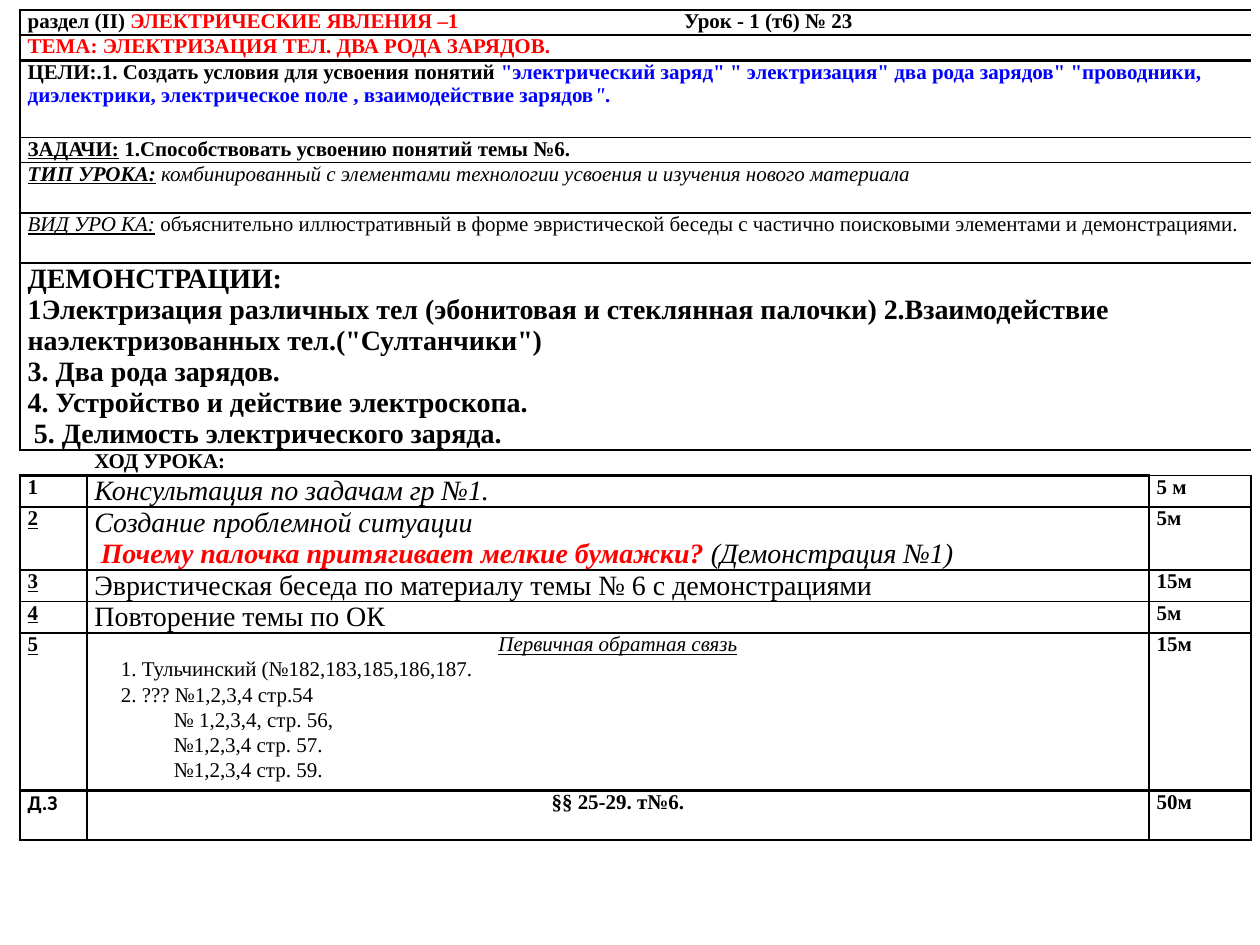
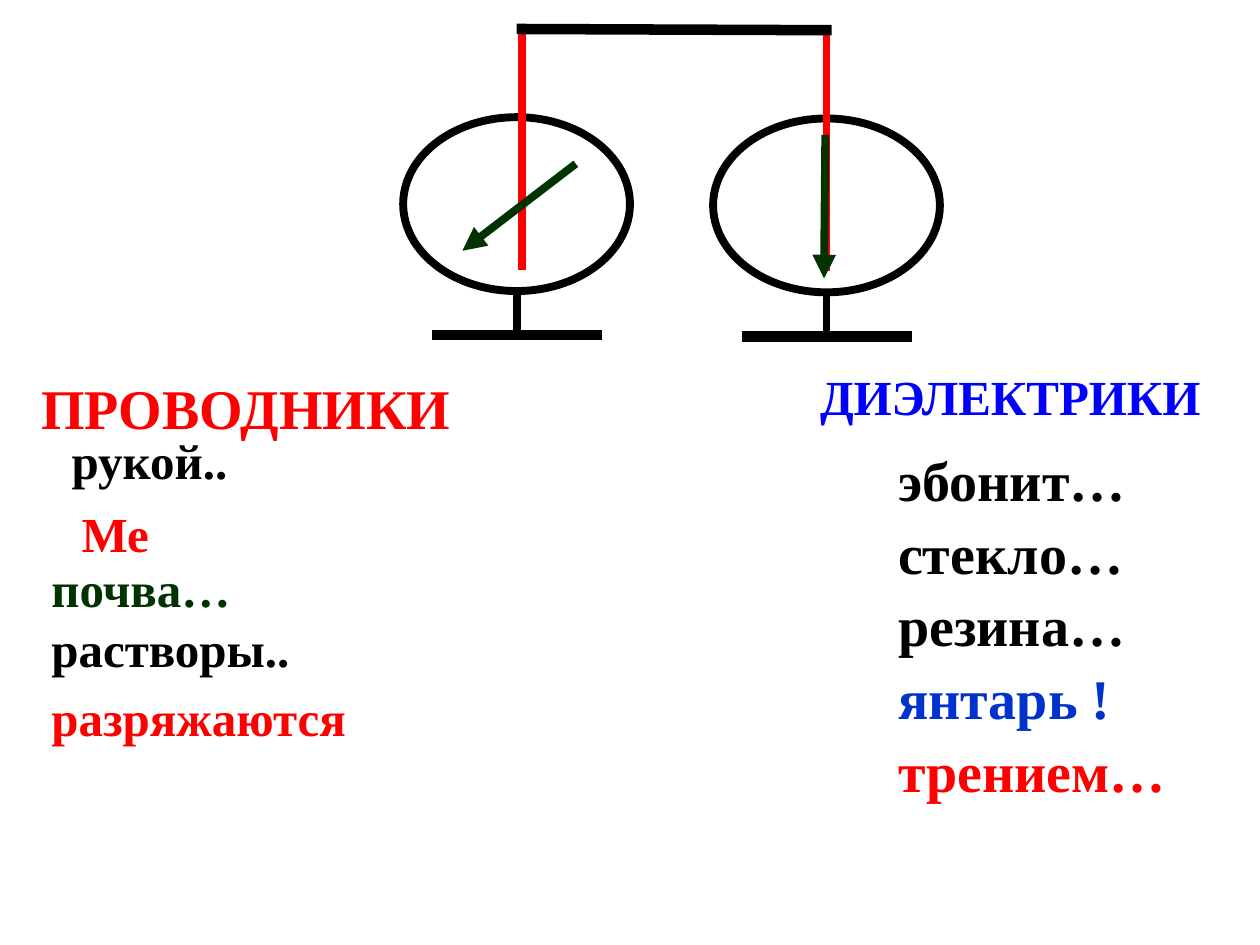
from lxml import etree
from pptx import Presentation
from pptx import util as u
from pptx.dml.color import RGBColor
from pptx.enum import shapes, text
from pptx.oxml.ns import qn

FONT = "Times New Roman"
COLORS = {"black": "000000", "red": "FF0000", "blue": "0000FF",
          "royal": "0033CC", "green": "003300"}
LINE_SPACING = 1.08

# A run is (text, style words); a paragraph is a list of runs.
# Lesson header rows: (height, text size, paragraphs)
HEADER_ROWS = [
    (0.2, 12, [[("раздел (II) ", "b"), ("ЭЛЕКТРИЧЕСКИЕ ЯВЛЕНИЯ –1", "b red"),
                ("\tУрок - 1 (т6) № 23", "b")]]),
    (0.2, 12, [[("ТЕМА: ЭЛЕКТРИЗАЦИЯ ТЕЛ. ДВА РОДА ЗАРЯДОВ.", "b red")]]),
    (0.61, 12, [[("ЦЕЛИ:.1. Создать условия для усвоения понятий ", "b"),
                 ('"электрический заряд" " электризация" два рода зарядов" "проводники, '
                  "диэлектрики, электрическое поле , взаимодействие зарядов", "b blue"),
                 ('".', "b i blue")]]),
    (0.2, 12, [[("ЗАДАЧИ:", "b u"), (" 1.Способствовать усвоению понятий темы №6.", "b")]]),
    (0.4, 12, [[("ТИП УРОКА:", "b i u"),
                (" комбинированный с элементами технологии усвоения и изучения "
                 "нового материала", "i")]]),
    (0.4, 12, [[("ВИД УРО КА:", "i u"),
                (" объяснительно иллюстративный в форме эвристической беседы с частично "
                 "поисковыми элементами и демонстрациями.", "")]]),
    (1.48, 16, [[("ДЕМОНСТРАЦИИ:", "b")],
                [("1Электризация различных тел (эбонитовая и стеклянная палочки) "
                  '2.Взаимодействие наэлектризованных тел.("Султанчики")', "b")],
                [("3. Два рода зарядов.", "b")],
                [("4. Устройство и действие электроскопа.", "b")],
                [("5. Делимость электрического заряда.", "b")]]),
]
# Lesson plan rows: (height, number, number style, text size, paragraphs, time)
PLAN_ROWS = [
    (0.2, "", "b", 12, [[("ХОД УРОКА:", "b")]], ""),
    (0.25, "1", "b", 16, [[("Консультация по задачам гр №1.", "i")]], "5 м"),
    (0.5, "2", "b u", 16, [[("Создание проблемной ситуации", "i")],
                           [("Почему палочка притягивает мелкие бумажки?", "b i red"),
                            (" (Демонстрация №1)", "i")]], "5м"),
    (0.25, "3", "b u", 16,
     [[("Эвристическая беседа по материалу темы № 6 с демонстрациями", "")]], "15м"),
    (0.25, "4", "b u", 16, [[("Повторение темы по ОК", "")]], "5м"),
    (1.25, "5", "b u", 12, [[("Первичная обратная связь", "i u")],
                            [("1. Тульчинский (№182,183,185,186,187.", "")],
                            [("2. ??? №1,2,3,4 стр.54", "")],
                            [("№ 1,2,3,4, стр. 56,", "")],
                            [("№1,2,3,4 стр. 57.", "")],
                            [("№1,2,3,4 стр. 59.", "")]], "15м"),
    (0.39, "Д.З", "b calibri", 12, [[("§§ 25-29. т№6.", "b")]], "50м"),
]
COLUMNS = [0.53, 8.43, 0.81]
ROW_EDGES = [1, 1.5, 1.5, 1, 1, 1, 1.5, 1.5, 1.5, 1, 1, 1, 1, 1.5, 1.5]
OPEN_ROW = len(HEADER_ROWS)
LAST_ROW = OPEN_ROW + len(PLAN_ROWS) - 1
FEEDBACK_ROW = LAST_ROW - 1
# Left indents by (row, paragraph)
INDENTS = {(6, 4): 0.05, (OPEN_ROW + 2, 1): 0.05,
           **{(FEEDBACK_ROW, i): 0.21 if i < 3 else 0.63 for i in range(1, 6)}}
CENTERED = {(FEEDBACK_ROW, 0), (LAST_ROW, 0)}
LESSON_TAB = 5.21

# Electroscopes: (left, top, rod offset, needle from, needle to)
ELECTROSCOPES = [
    (3.2, 0.93, 0.94, (4.57, 1.3), (3.67, 1.99)),
    (5.66, 0.94, 0.9, (6.55, 1.07), (6.54, 2.21)),
]
# Labels: (left, top, width, height, size, wrapped, [(text, colour)])
LABELS = [
    (0.23, 2.87, 3.48, 0.64, 32, False, [("ПРОВОДНИКИ", "red")]),
    (0.47, 3.33, 1.55, 0.57, 28, False, [("рукой..", "black")]),
    (0.55, 3.91, 0.84, 0.57, 28, False, [("Ме", "red")]),
    (0.31, 4.35, 1.64, 0.57, 28, False, [("почва…", "green")]),
    (0.31, 4.82, 2.21, 0.57, 28, False, [("растворы..", "black")]),
    (0.31, 5.37, 2.56, 0.57, 28, False, [("разряжаются", "red")]),
    (6.41, 2.84, 3.28, 0.57, 28, True, [("ДИЭЛЕКТРИКИ", "blue")]),
    (7.03, 3.54, 2.58, 2.79, 32, True,
     [("эбонит…", "black"), ("стекло…", "black"), ("резина…", "black"),
      ("янтарь !", "royal"), ("трением…", "red")]),
]


def rgb(name):
    return RGBColor.from_string(COLORS[name])


def add_run(p, content, size, style):
    """Style words: b, i, u, calibri or a colour name."""
    words = style.split()
    r = p.add_run()
    r.text = content
    f = r.font
    f.size = u.Pt(size)
    f.name = "Calibri" if "calibri" in words else FONT
    f.bold, f.italic, f.underline = (w in words for w in "biu")
    f.color.rgb = rgb(next((w for w in words if w in COLORS), "black"))


def set_borders(cell, widths):
    """Widths in points for left, right, top and bottom; 0 means none."""
    tc_pr = cell._tc.get_or_add_tcPr()
    for side, width in zip("LRTB", widths):
        ln = etree.SubElement(tc_pr, qn(f"a:ln{side}"), w=str(u.Pt(width)))
        if width:
            fill = etree.SubElement(ln, qn("a:solidFill"))
            etree.SubElement(fill, qn("a:srgbClr"), val=COLORS["black"])
        else:
            etree.SubElement(ln, qn("a:noFill"))


def column_edges(row):
    """Widths of the four vertical rules that cross a row."""
    if row < OPEN_ROW:
        side = 1.5 if row in (1, 6) else 1
        return [side, 0, 0, side]
    if row == OPEN_ROW:
        return [0, 0, 0, 0]
    return [1.5, 1, 1, 1.5] if row == LAST_ROW else [1.5, 1.5, 1, 1]


def fill_cell(cell, paragraphs, size, row, main=False):
    tf = cell.text_frame
    for i, runs in enumerate(paragraphs):
        p = tf.add_paragraph() if i else tf.paragraphs[0]
        for content, style in runs:
            add_run(p, content, size, style)
        if not main:
            continue
        if (row, i) in CENTERED:
            p.alignment = text.PP_ALIGN.CENTER
        if (row, i) in INDENTS:
            p._p.get_or_add_pPr().set("marL", str(u.Inches(INDENTS[row, i])))
        if row == FEEDBACK_ROW and i:
            p.line_spacing = LINE_SPACING
        if "\t" in p.text:
            tabs = etree.SubElement(p._p.get_or_add_pPr(), qn("a:tabLst"))
            etree.SubElement(tabs, qn("a:tab"), pos=str(u.Inches(LESSON_TAB)), algn="l")


def build_lesson_plan(slide):
    heights = [row[0] for row in HEADER_ROWS + PLAN_ROWS]
    frame = slide.shapes.add_table(len(heights), len(COLUMNS), u.Inches(0.16), u.Inches(0.08),
                                   u.Inches(sum(COLUMNS)), u.Inches(sum(heights)))
    table = frame.table
    table.first_row = table.horz_banding = False
    for column, width in zip(table.columns, COLUMNS):
        column.width = u.Inches(width)
    for n, height in enumerate(heights):
        table.rows[n].height = u.Inches(height)
        edges = column_edges(n)
        for c in range(len(COLUMNS)):
            cell = table.cell(n, c)
            bottom = 1 if (n, c) == (OPEN_ROW, 2) else ROW_EDGES[n + 1]
            top = 1 if (n, c) == (OPEN_ROW + 1, 2) else ROW_EDGES[n]
            set_borders(cell, (edges[c], edges[c + 1], top, bottom))
            cell.fill.background()
            cell.margin_left = cell.margin_right = u.Inches(0.06)
            cell.margin_top = cell.margin_bottom = 0
            cell.text_frame.paragraphs[0]._p.get_or_add_endParaRPr().set("sz", "1200")
    for n, (_, size, paragraphs) in enumerate(HEADER_ROWS):
        table.cell(n, 0).merge(table.cell(n, 2))
        fill_cell(table.cell(n, 0), paragraphs, size, n, main=True)
    for n, (_, number, style, size, paragraphs, time) in enumerate(PLAN_ROWS, OPEN_ROW):
        fill_cell(table.cell(n, 1), paragraphs, size, n, main=True)
        if number:
            fill_cell(table.cell(n, 0), [[(number, style)]], 12, n)
            fill_cell(table.cell(n, 2), [[(time, "b")]], 12, n)


def add_line(parent, start, end, color="black", width=4.5, arrow=False):
    points = [u.Inches(v) for v in (*start, *end)]
    line = parent.shapes.add_connector(shapes.MSO_CONNECTOR.STRAIGHT, *points)
    line.line.color.rgb = rgb(color)
    line.line.width = u.Pt(width)
    if arrow:
        etree.SubElement(line.line._get_or_add_ln(), qn("a:tailEnd"), type="triangle")
    etree.SubElement(line._element.spPr, qn("a:effectLst"))


def add_electroscope(slide, left, top, rod, needle_from, needle_to):
    group = slide.shapes.add_group_shape()
    case = group.shapes.add_shape(shapes.MSO_SHAPE.OVAL, u.Inches(left), u.Inches(top),
                                  u.Inches(1.8), u.Inches(1.38))
    case.shadow.inherit = False
    case.fill.background()
    case.line.color.rgb = rgb("black")
    case.line.width = u.Pt(4.5)
    middle, floor = left + 0.9, top + 1.73
    add_line(group, (middle, top + 1.38), (middle, floor))
    add_line(group, (middle - 0.67, floor), (middle + 0.68, floor), width=6)
    add_line(slide, (left + rod, top - 0.7), (left + rod, top + 1.21), "red")
    add_line(slide, needle_from, needle_to, "green", arrow=True)


def add_label(slide, left, top, width, height, size, wrapped, lines):
    sp = slide.shapes.add_textbox(*(u.Inches(v) for v in (left, top, width, height)))
    tf = sp.text_frame
    tf.word_wrap = wrapped
    tf.auto_size = text.MSO_AUTO_SIZE.SHAPE_TO_FIT_TEXT
    if wrapped:
        tf.vertical_anchor = text.MSO_ANCHOR.MIDDLE
    for i, (content, color) in enumerate(lines):
        p = tf.add_paragraph() if i else tf.paragraphs[0]
        p.line_spacing = LINE_SPACING
        add_run(p, content, size, f"b {color}")


def build_conductors(slide):
    for scope in ELECTROSCOPES:
        add_electroscope(slide, *scope)
    add_line(slide, (4.1, 0.23), (6.6, 0.24), width=6)
    for label in LABELS:
        add_label(slide, *label)


def main():
    prs = Presentation()
    prs.slide_width, prs.slide_height = u.Inches(10), u.Inches(7.5)
    blank = prs.slide_layouts[6]
    for build in (build_lesson_plan, build_conductors):
        build(prs.slides.add_slide(blank))
    prs.save("out.pptx")


if __name__ == "__main__":
    main()
